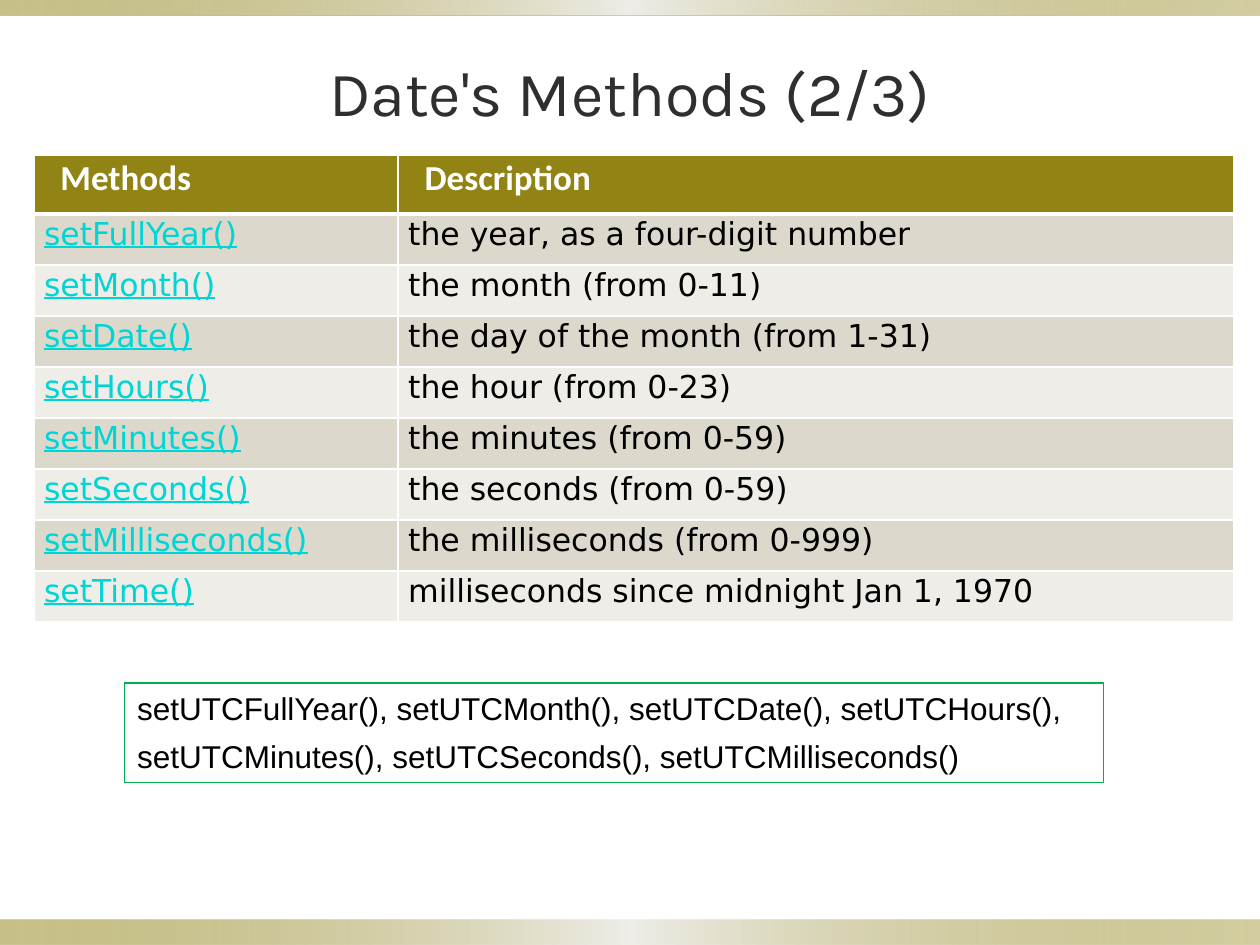
from lxml import etree
from pptx import Presentation
from pptx import util as u
from pptx.dml.color import RGBColor
from pptx.enum import shapes, text
from pptx.oxml.ns import qn

INK, OLIVE, SAND, PALE, WHITE = "000000", "918415", "DCD9CC", "EEEDE8", "FFFFFF"
METHODS = [
    ("setFullYear()", "the year, as a four-digit number"),
    ("setMonth()", "the month (from 0-11)"),
    ("setDate()", "the day of the month (from 1-31)"),
    ("setHours()", "the hour (from 0-23)"),
    ("setMinutes()", "the minutes (from 0-59)"),
    ("setSeconds()", "the seconds (from 0-59)"),
    ("setMilliseconds()", "the milliseconds (from 0-999)"),
    ("setTime()", "milliseconds since midnight Jan 1, 1970"),
]
UTC_METHODS = [
    "setUTCFullYear(), setUTCMonth(), setUTCDate(), setUTCHours(),",
    "setUTCMinutes(), setUTCSeconds(), setUTCMilliseconds()",
]


def rgb(value):
    return RGBColor.from_string(value)


def child(parent, tag, **attributes):
    return etree.SubElement(parent, qn(tag), attributes)


class SlideBuilder:
    def __init__(self, slide):
        self.slide = slide

    def rectangle(self, *bounds):
        shape = self.slide.shapes.add_shape(
            shapes.MSO_SHAPE.RECTANGLE, *map(u.Inches, bounds))
        shape.shadow.inherit = False
        return shape

    def style(self, paragraph, font, size, color, bold=False, underline=False):
        for span in paragraph.runs:
            span.font.name = font
            span.font.size = u.Pt(size)
            span.font.color.rgb = rgb(color)
            span.font.bold = bold
            span.font.underline = underline

    def band(self, top, height):
        shape = self.rectangle(0, top, 10, height)
        shape.line.fill.background()
        shape.fill.gradient()
        shape.fill.gradient_angle = 0
        stops = shape._element.spPr.find(".//" + qn("a:gsLst"))
        for stop in list(stops):
            stops.remove(stop)
        for place, color, opacity in ((0, OLIVE, 50), (50, PALE, 100), (100, OLIVE, 40)):
            stop = child(stops, "a:gs", pos=str(place * 1000))
            tint = child(stop, "a:srgbClr", val=color)
            child(tint, "a:alpha", val=str(opacity * 1000))

    def title(self, wording):
        box = self.slide.shapes.add_textbox(*map(u.Inches, (0.5, 0.3, 9, 0.85)))
        frame = box.text_frame
        frame.word_wrap = True
        frame.vertical_anchor = text.MSO_ANCHOR.MIDDLE
        frame.text = wording
        frame.paragraphs[0].alignment = text.PP_ALIGN.CENTER
        self.style(frame.paragraphs[0], "Karla", 36, "2F2F2F")

    def borders(self, cell, bottom):
        properties = cell._tc.get_or_add_tcPr()
        widths = {"a:lnL": 1, "a:lnR": 1, "a:lnT": 1, "a:lnB": bottom}
        for index, (tag, width) in enumerate(widths.items()):
            line = etree.Element(qn(tag), w=str(u.Pt(width)))
            child(child(line, "a:solidFill"), "a:srgbClr", val=WHITE)
            properties.insert(index, line)

    def cell(self, cell, wording, fill, left=0.08, bottom=1, **style):
        cell.margin_left = u.Inches(left)
        cell.margin_top = cell.margin_right = cell.margin_bottom = u.Inches(0.02)
        cell.fill.solid()
        cell.fill.fore_color.rgb = rgb(fill)
        cell.text = wording
        self.style(cell.text_frame.paragraphs[0], **style)
        self.borders(cell, bottom)

    def table(self, headings, records):
        height, header = 3.71, 0.47
        table = self.slide.shapes.add_table(
            len(records) + 1, 2, *map(u.Inches, (0.27, 1.23, 9.52, height))).table
        for column, width in zip(table.columns, (2.89, 6.63)):
            column.width = u.Inches(width)
        for row in table.rows:
            row.height = u.Inches((height - header) / len(records))
        table.rows[0].height = u.Inches(header)
        for column, heading in enumerate(headings):
            self.cell(table.cell(0, column), heading, OLIVE, left=0.21, bottom=3,
                      font="Calibri", size=20, color=WHITE, bold=True)
        for row, record in enumerate(records, 1):
            fill = SAND if row % 2 else PALE
            for column, wording in enumerate(record):
                link = column == 0
                self.cell(table.cell(row, column), wording, fill, font="DejaVu Sans",
                          size=18, color="00D5D5" if link else INK, underline=link)

    def outlined_note(self, lines):
        box = self.rectangle(0.99, 5.42, 7.77, 0.79)
        box.fill.background()
        box.line.color.rgb = rgb("00B050")
        box.line.width = u.Pt(0.75)
        frame = box.text_frame
        frame.word_wrap = True
        frame.vertical_anchor = text.MSO_ANCHOR.TOP
        frame.text = "\n".join(lines)
        for index, paragraph in enumerate(frame.paragraphs):
            paragraph.alignment = text.PP_ALIGN.LEFT
            if index:
                paragraph.space_before = u.Pt(6)
            self.style(paragraph, "Arial", 18, INK)


def main():
    deck = Presentation()
    deck.slide_width, deck.slide_height = u.Inches(10), u.Inches(7.5)
    page = SlideBuilder(deck.slides.add_slide(deck.slide_layouts[6]))
    page.band(7.3, 0.2)
    page.band(0, 0.12)
    page.title("Date's Methods (2/3)")
    page.table(("Methods", "Description"), METHODS)
    page.outlined_note(UTC_METHODS)
    deck.save("out.pptx")


if __name__ == "__main__":
    main()
